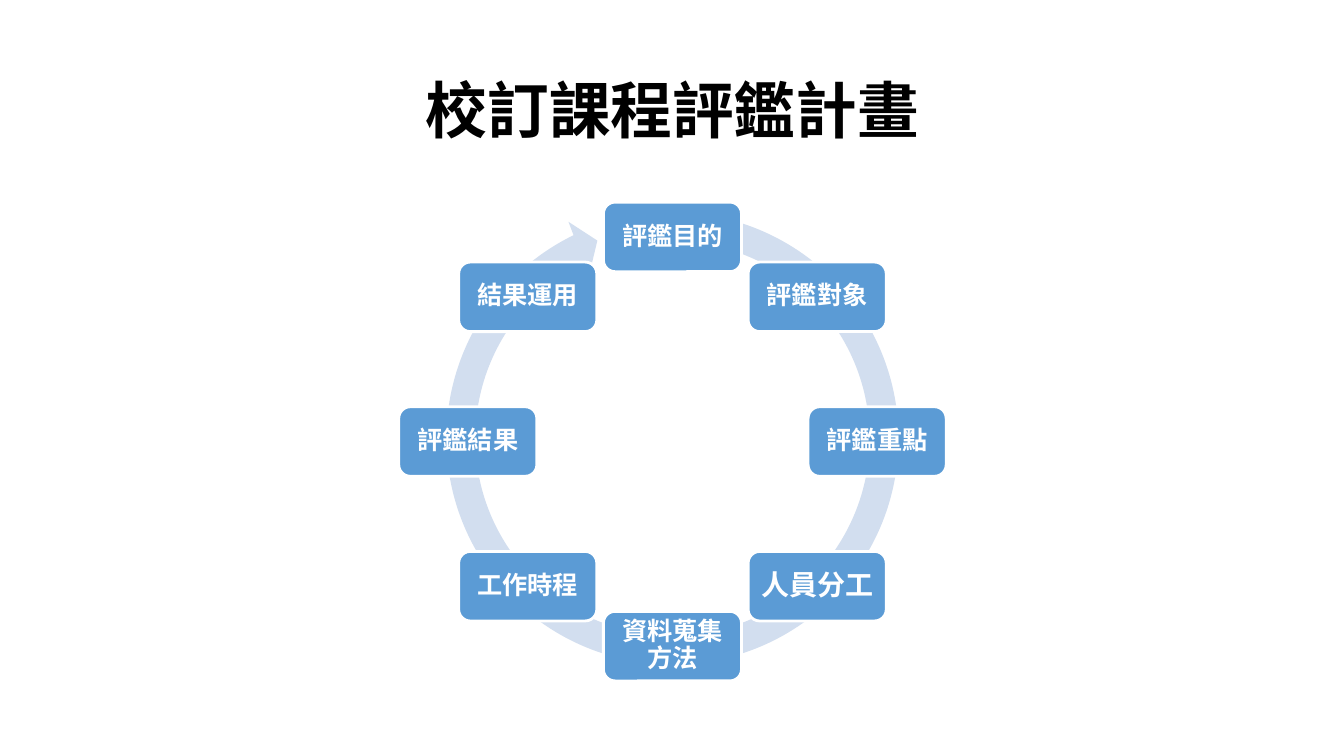
from math import cos, pi, sin

from pptx import Presentation
from pptx.dml.color import RGBColor
from pptx.enum.shapes import MSO_SHAPE
from pptx.enum.text import MSO_ANCHOR, PP_ALIGN
from pptx.util import Inches, Pt

BLACK = RGBColor(0x00, 0x00, 0x00)
WHITE = RGBColor(0xFF, 0xFF, 0xFF)
BLUE = RGBColor(0x5B, 0x9B, 0xD5)
PALE_BLUE = RGBColor(0xD2, 0xDE, 0xEF)
CIRCULAR_ARROW = MSO_SHAPE.CIRCULAR_ARROW
ROUNDED_RECTANGLE = MSO_SHAPE.ROUNDED_RECTANGLE
MIDDLE = MSO_ANCHOR.MIDDLE
CENTER = PP_ALIGN.CENTER

TITLE_ONLY_LAYOUT = 5
CENTER_X, CENTER_Y, RADIUS = 6.67, 4.38, 2.03
ARROW_CENTER_Y, ARROW_SIZE = 4.35, 4.77
ARROW_ADJUSTMENTS = (0.06, 3.31, 146.22, 168.9, 0.06)
STEP_WIDTH, STEP_HEIGHT = 1.37, 0.69

# Step name and text size, clockwise from the top
STEPS = [
    ("評鑑目的", 18),
    ("評鑑對象", 18),
    ("評鑑重點", 18),
    ("人員分工", 20),
    ("資料蒐集方法", 18),
    ("工作時程", 18),
    ("評鑑結果", 18),
    ("結果運用", 18),
]


class CycleSlide:
    font_name = "Cabin"

    def __init__(self, presentation):
        layout = presentation.slide_layouts[TITLE_ONLY_LAYOUT]
        self.slide = presentation.slides.add_slide(layout)

    def set_text(self, shape, text, size, color):
        text_frame = shape.text_frame
        text_frame.text = text
        text_frame.word_wrap = True
        text_frame.vertical_anchor = MIDDLE
        paragraph = text_frame.paragraphs[0]
        paragraph.alignment = CENTER
        paragraph.line_spacing = 0.9
        font = paragraph.runs[0].font
        font.name = self.font_name
        font.size = Pt(size)
        font.bold = True
        font.color.rgb = color

    def title(self, text):
        shape = self.slide.shapes.title
        shape.left, shape.top = Inches(0.92), Inches(0.4)
        shape.width, shape.height = Inches(11.5), Inches(1.45)
        self.set_text(shape, text, 44, BLACK)

    def centered_shape(self, kind, x, y, width, height, color):
        shape = self.slide.shapes.add_shape(
            kind, Inches(x - width / 2), Inches(y - height / 2),
            Inches(width), Inches(height))
        shape.shadow.inherit = False
        shape.fill.solid()
        shape.fill.fore_color.rgb = color
        return shape

    def cycle_arrow(self):
        shape = self.centered_shape(CIRCULAR_ARROW, CENTER_X, ARROW_CENTER_Y,
                                    ARROW_SIZE, ARROW_SIZE, PALE_BLUE)
        shape.line.fill.background()
        for index, value in enumerate(ARROW_ADJUSTMENTS):
            shape.adjustments[index] = value

    def step(self, text, size, x, y):
        shape = self.centered_shape(ROUNDED_RECTANGLE, x, y,
                                    STEP_WIDTH, STEP_HEIGHT, BLUE)
        shape.line.color.rgb = WHITE
        shape.line.width = Pt(2)
        self.set_text(shape, text, size, WHITE)
        text_frame = shape.text_frame
        text_frame.margin_left = text_frame.margin_right = Inches(0.07)
        text_frame.margin_top = text_frame.margin_bottom = Inches(0.07)


def main():
    presentation = Presentation()
    presentation.slide_width = Inches(13.33)
    presentation.slide_height = Inches(7.5)
    cycle = CycleSlide(presentation)

    # Title
    cycle.title("校訂課程評鑑計畫")

    # Ring behind the steps
    cycle.cycle_arrow()

    # Steps evenly spaced around the ring
    for index, (text, size) in enumerate(STEPS):
        angle = 2 * pi * index / len(STEPS)
        cycle.step(text, size, CENTER_X + RADIUS * sin(angle),
                   CENTER_Y - RADIUS * cos(angle))

    presentation.save("out.pptx")


if __name__ == "__main__":
    main()
